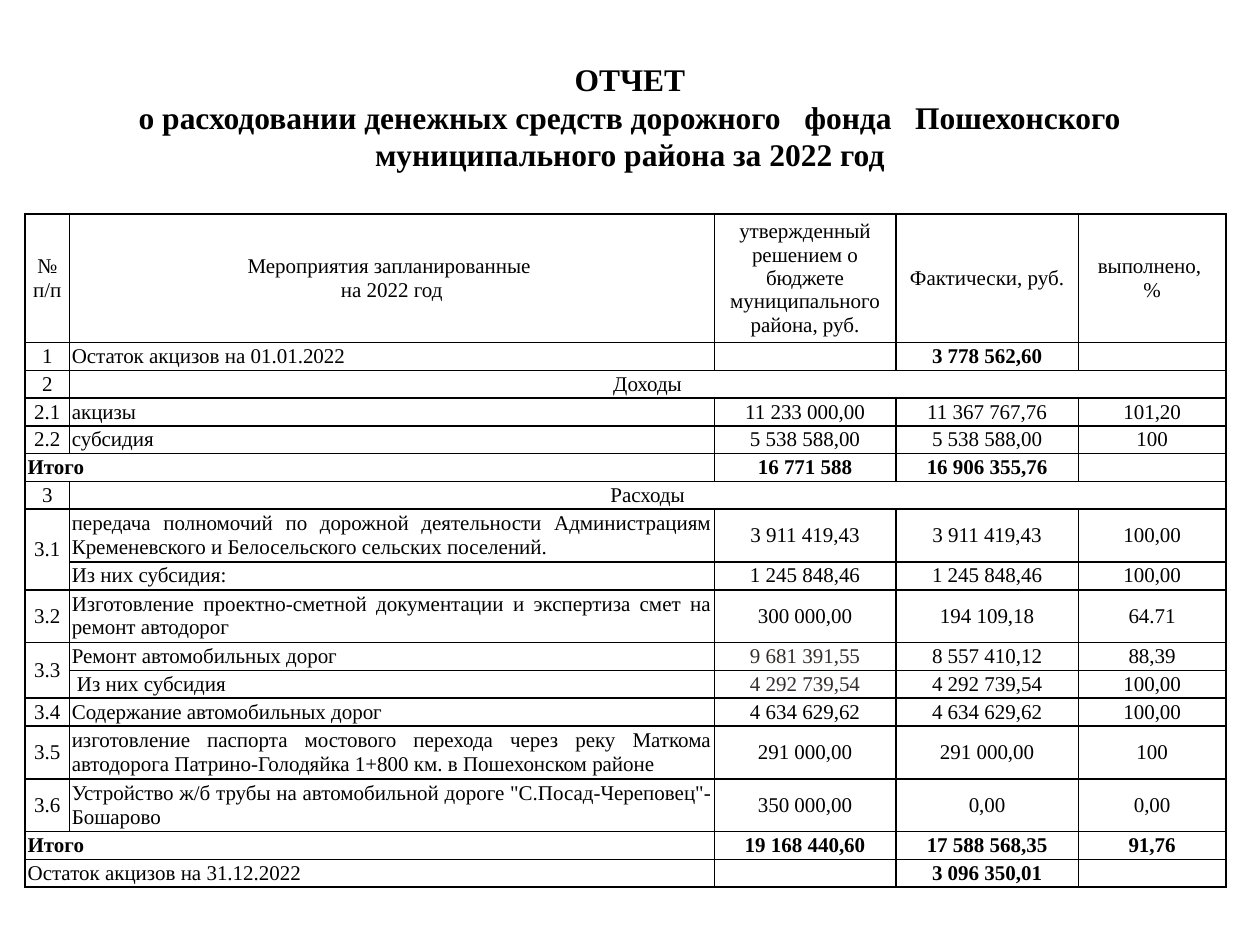
from dataclasses import dataclass

from lxml import etree
from pptx import Presentation
from pptx.dml.color import RGBColor
from pptx.enum.text import MSO_ANCHOR, PP_ALIGN
from pptx.oxml.ns import qn
from pptx.util import Inches, Pt

MIDDLE = MSO_ANCHOR.MIDDLE
CENTER, LEFT, JUSTIFY = PP_ALIGN.CENTER, PP_ALIGN.LEFT, PP_ALIGN.JUSTIFY


@dataclass(frozen=True)
class Theme:
    font: str = "Times New Roman"
    ink: str = "000000"
    muted: str = "332E2D"
    title_size: int = 18
    table_size: int = 12
    border_width: int = 1


THEME = Theme()

TITLE = ("ОТЧЕТ\vо расходовании денежных средств дорожного   фонда   "
         "Пошехонского муниципального района за 2022 год")

TOTAL, BALANCE = "Итого", "Остаток"
NUMBER_COL, ACTIVITY_COL, PLAN_COL, ACTUAL_COL, PERCENT_COL = range(5)
COLUMN_WIDTHS = (0.35, 5.12, 1.44, 1.45, 1.17)
HEADER_HEIGHT, ONE_LINE_HEIGHT, TWO_LINE_HEIGHT = 1.02, 0.22, 0.4
TWO_LINE_ITEMS = ("передача", "Изготовление", "изготовление", "Устройство")

# None marks a cell covered by the one to its left or, in the first column, above it.
ROWS = [
    ("№ п/п", "Мероприятия запланированные \nна 2022 год",
     "утвержденный решением о бюджете муниципального района, руб.",
     "Фактически, руб.", "выполнено, \n%"),
    ("1", "Остаток акцизов на 01.01.2022", "", "3 778 562,60", ""),
    ("2", "Доходы", None, None, None),
    ("2.1", "акцизы", "11 233 000,00", "11 367 767,76", "101,20"),
    ("2.2", "субсидия", "5 538 588,00", "5 538 588,00", "100"),
    ("Итого", None, "16 771 588", "16 906 355,76", ""),
    ("3", "Расходы", None, None, None),
    ("3.1", "передача полномочий по дорожной деятельности Администрациям "
     "Кременевского и Белосельского сельских поселений.",
     "3 911 419,43", "3 911 419,43", "100,00"),
    (None, "Из них субсидия:", "1 245 848,46", "1 245 848,46", "100,00"),
    ("3.2", "Изготовление проектно-сметной документации и экспертиза смет "
     "на ремонт автодорог", "300 000,00", "194 109,18", "64.71"),
    ("3.3", "Ремонт автомобильных дорог",
     "9 681 391,55", "8 557 410,12", "88,39"),
    (None, " Из них субсидия", "4 292 739,54", "4 292 739,54", "100,00"),
    ("3.4", "Содержание автомобильных дорог",
     "4 634 629,62", "4 634 629,62", "100,00"),
    ("3.5", "изготовление паспорта мостового перехода через реку Маткома "
     "автодорога Патрино-Голодяйка 1+800 км. в Пошехонском районе",
     "291 000,00", "291 000,00", "100"),
    ("3.6", "Устройство ж/б трубы на автомобильной дороге "
     "\"С.Посад-Череповец\"-Бошарово", "350 000,00", "0,00", "0,00"),
    ("Итого", None, "19 168 440,60", "17 588 568,35", "91,76"),
    ("Остаток акцизов на 31.12.2022", None, "", "3 096 350,01", ""),
]
MUTED_CELLS = {(10, PLAN_COL), (11, PLAN_COL)}


def format_text(text_frame, size, align, bold=False, color=THEME.ink):
    for paragraph in text_frame.paragraphs:
        paragraph.alignment = align
        for run in paragraph.runs:
            run.font.name = THEME.font
            run.font.size = Pt(size)
            run.font.bold = bold
            run.font.color.rgb = RGBColor.from_string(color)
        if not paragraph.runs:
            # An empty cell needs its own size, or it would stretch the row.
            etree.SubElement(paragraph._p, qn("a:endParaRPr"), sz=str(size * 100))


def add_title(slide):
    title = slide.shapes.add_textbox(Inches(0.5), Inches(0.3), Inches(9), Inches(1.25))
    frame = title.text_frame
    frame.word_wrap = True
    frame.vertical_anchor = MIDDLE
    frame.text = TITLE
    format_text(frame, THEME.title_size, CENTER, bold=True)


def add_borders(cell):
    properties = cell._tc.get_or_add_tcPr()
    for side in ("lnL", "lnR", "lnT", "lnB"):
        line = etree.SubElement(properties, qn(f"a:{side}"),
                                w=str(Pt(THEME.border_width)))
        fill = etree.SubElement(line, qn("a:solidFill"))
        etree.SubElement(fill, qn("a:srgbClr"), val=THEME.ink)


def row_height(row_index, activity):
    if row_index == 0:
        return HEADER_HEIGHT
    two_lines = (activity or "").startswith(TWO_LINE_ITEMS)
    return TWO_LINE_HEIGHT if two_lines else ONE_LINE_HEIGHT


def cell_alignment(row_index, column, entries):
    is_section = entries[PLAN_COL] is None
    if column == ACTIVITY_COL and row_index and not is_section:
        return JUSTIFY
    if column == NUMBER_COL and entries[ACTIVITY_COL] is None:
        return LEFT
    return CENTER


def is_bold(column, entries):
    label = entries[ACTIVITY_COL] or entries[NUMBER_COL]
    return label == TOTAL or (label.startswith(BALANCE) and column == ACTUAL_COL)


def merge_spans(table):
    for row_index, entries in enumerate(ROWS):
        if entries[NUMBER_COL] is None:
            table.cell(row_index - 1, NUMBER_COL).merge(table.cell(row_index, NUMBER_COL))
        if entries[ACTIVITY_COL] is None:
            table.cell(row_index, NUMBER_COL).merge(table.cell(row_index, ACTIVITY_COL))
        if entries[PLAN_COL] is None:
            table.cell(row_index, ACTIVITY_COL).merge(table.cell(row_index, PERCENT_COL))


def fill_cell(cell, row_index, column, entries):
    cell.margin_left = cell.margin_right = Inches(0.02)
    cell.margin_top = cell.margin_bottom = Inches(0.01)
    cell.vertical_anchor = MIDDLE
    add_borders(cell)
    cell.fill.background()
    cell.text_frame.text = entries[column] or ""
    color = THEME.muted if (row_index, column) in MUTED_CELLS else THEME.ink
    format_text(cell.text_frame, THEME.table_size,
                cell_alignment(row_index, column, entries),
                is_bold(column, entries), color)


def add_report_table(slide):
    heights = [row_height(index, entries[ACTIVITY_COL])
               for index, entries in enumerate(ROWS)]
    table = slide.shapes.add_table(
        len(ROWS), len(COLUMN_WIDTHS), Inches(0.2), Inches(1.7),
        Inches(sum(COLUMN_WIDTHS)), Inches(sum(heights))).table
    table.first_row = table.horz_banding = False
    for column, width in zip(table.columns, COLUMN_WIDTHS):
        column.width = Inches(width)
    for row, height in zip(table.rows, heights):
        row.height = Inches(height)
    for row_index, entries in enumerate(ROWS):
        for column in range(len(entries)):
            fill_cell(table.cell(row_index, column), row_index, column, entries)
    merge_spans(table)


def main():
    presentation = Presentation()
    presentation.slide_width = Inches(10)
    presentation.slide_height = Inches(7.5)
    slide = presentation.slides.add_slide(presentation.slide_layouts[6])
    add_title(slide)
    add_report_table(slide)
    presentation.save("out.pptx")


if __name__ == "__main__":
    main()
